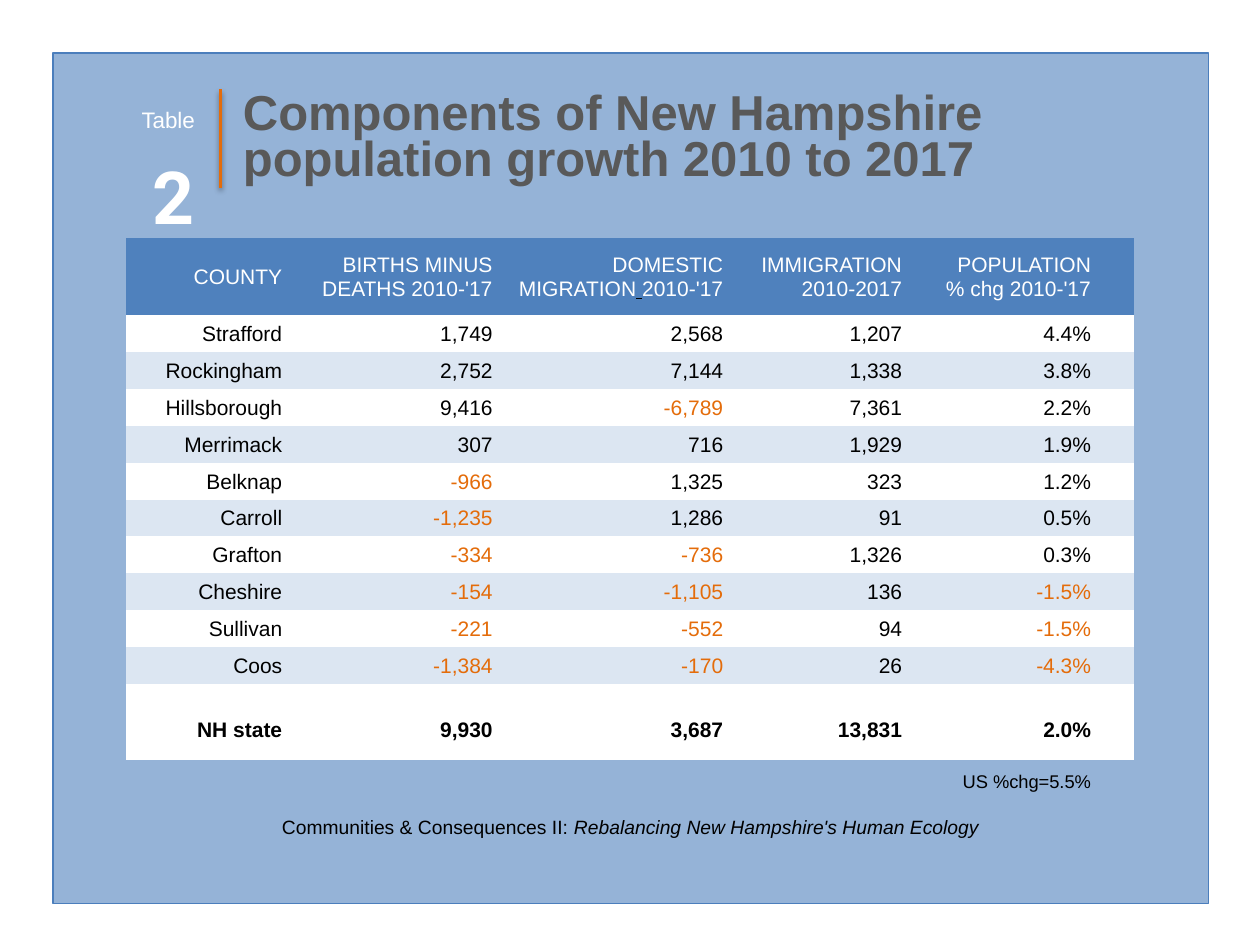
from dataclasses import dataclass

from lxml.etree import SubElement
from pptx import Presentation
from pptx.dml.color import RGBColor
from pptx.enum.shapes import MSO_CONNECTOR, MSO_SHAPE
from pptx.enum.text import MSO_ANCHOR, MSO_AUTO_SIZE, PP_ALIGN
from pptx.oxml import parse_xml
from pptx.oxml.ns import qn
from pptx.util import Inches, Pt

NO_STYLE_NO_GRID = "{2D5ABB26-0587-4C30-8999-92F81FD0307C}"


@dataclass(frozen=True)
class Theme:
    font: str = "Arial"
    number_font: str = "Roboto"
    panel: str = "95B3D7"
    panel_line: str = "4B7EBC"
    header: str = "4F81BD"
    band: str = "DCE6F2"
    white: str = "FFFFFF"
    black: str = "000000"
    title: str = "595959"
    accent: str = "E46C0A"
    number_size: float = 72
    title_size: float = 28
    label_size: float = 22
    table_size: float = 12
    source_size: float = 11
    note_size: float = 10.5


HEADERS = [
    "COUNTY",
    "BIRTHS MINUS\vDEATHS 2010-'17",
    "DOMESTIC\vMIGRATION",
    "IMMIGRATION\n2010-2017",
    "POPULATION\v% chg 2010-'17",
]
COUNTIES = [
    ["Strafford", "1,749", "2,568", "1,207", "4.4%"],
    ["Rockingham", "2,752", "7,144", "1,338", "3.8%"],
    ["Hillsborough", "9,416", "-6,789", "7,361", "2.2%"],
    ["Merrimack", "307", "716", "1,929", "1.9%"],
    ["Belknap", "-966", "1,325", "323", "1.2%"],
    ["Carroll", "-1,235", "1,286", "91", "0.5%"],
    ["Grafton", "-334", "-736", "1,326", "0.3%"],
    ["Cheshire", "-154", "-1,105", "136", "-1.5%"],
    ["Sullivan", "-221", "-552", "94", "-1.5%"],
    ["Coos", "-1,384", "-170", "26", "-4.3%"],
]
STATE_TOTAL = ["NH state", "9,930", "3,687", "13,831", "2.0%"]
COLUMN_WIDTHS = [1.25, 1.67, 1.83, 1.42, 1.5, 0.33]


class SlideBuilder:
    def __init__(self, slide, theme):
        self.slide = slide
        self.theme = theme

    def style_font(self, font, size, color, bold=False, name=None):
        font.name = name or self.theme.font
        font.size = Pt(size)
        font.bold = bold
        font.color.rgb = RGBColor.from_string(color)

    def panel(self, left, top, width, height):
        shape = self.slide.shapes.add_shape(
            MSO_SHAPE.RECTANGLE, Inches(left), Inches(top), Inches(width), Inches(height))
        shape.shadow.inherit = False
        shape.fill.solid()
        shape.fill.fore_color.rgb = RGBColor.from_string(self.theme.panel)
        shape.line.color.rgb = RGBColor.from_string(self.theme.panel_line)
        shape.line.width = Pt(0.75)

    def text(self, box, text, size, color, bold=False, name=None,
             align=PP_ALIGN.CENTER, wrap=True, raised=None):
        """Add a one-paragraph text box; raised is the baseline shift in percent."""
        shape = self.slide.shapes.add_textbox(*(Inches(value) for value in box))
        frame = shape.text_frame
        frame.word_wrap = wrap
        frame.auto_size = MSO_AUTO_SIZE.SHAPE_TO_FIT_TEXT
        paragraph = frame.paragraphs[0]
        paragraph.text = text
        paragraph.alignment = align
        self.style_font(paragraph.font, size, color, bold, name)
        if raised:
            for run in paragraph.runs:
                run.font.size = Pt(size)
                run._r.get_or_add_rPr().set("baseline", str(raised * 1000))
        return paragraph

    def divider(self, x, top, bottom):
        connector = self.slide.shapes.add_connector(
            MSO_CONNECTOR.STRAIGHT, Inches(x), Inches(top), Inches(x), Inches(bottom))
        connector.line.color.rgb = RGBColor.from_string(self.theme.accent)
        connector.line.width = Pt(2)
        effects = SubElement(connector._element.spPr, qn("a:effectLst"))
        effects.append(parse_xml(
            '<a:outerShdw xmlns:a="http://schemas.openxmlformats.org/drawingml/2006/main"'
            f' blurRad="{Pt(3.1)}" dist="{Pt(1.6)}" dir="5400000" rotWithShape="0">'
            '<a:srgbClr val="000000"><a:alpha val="38000"/></a:srgbClr></a:outerShdw>'))

    def table(self, left, top, column_widths, row_heights):
        frame = self.slide.shapes.add_table(
            len(row_heights), len(column_widths), Inches(left), Inches(top),
            Inches(sum(column_widths)), sum(row_heights))
        table = frame.table
        table.first_row = table.horz_banding = False
        table._tbl.tblPr.find(qn("a:tableStyleId")).text = NO_STYLE_NO_GRID
        for column, width in zip(table.columns, column_widths):
            column.width = Inches(width)
        for row, height in zip(table.rows, row_heights):
            row.height = height
        return table

    def table_row(self, row, texts, fill=None, color=None, size=None,
                  bold=False, anchor=MSO_ANCHOR.MIDDLE):
        """Fill one row; negative values take the accent colour."""
        for index, cell in enumerate(row.cells):
            text = texts[index] if index < len(texts) else ""
            cell.margin_left = cell.margin_right = cell.margin_top = Inches(0.01)
            cell.margin_bottom = 0
            cell.vertical_anchor = anchor
            if fill:
                cell.fill.solid()
                cell.fill.fore_color.rgb = RGBColor.from_string(fill)
            else:
                cell.fill.background()
            cell.text_frame.text = text
            text_color = self.theme.accent if text.startswith("-") else color or self.theme.black
            for paragraph in cell.text_frame.paragraphs:
                paragraph.alignment = PP_ALIGN.RIGHT
                self.style_font(paragraph.font, size or self.theme.table_size, text_color, bold)


def fill_population_table(builder):
    theme = builder.theme
    county_height = Inches(2.93) // len(COUNTIES)
    row_heights = [Inches(0.61), *[county_height] * len(COUNTIES),
                   Inches(0.26), Inches(0.34), Inches(0.26)]
    table = builder.table(1, 1.89, COLUMN_WIDTHS, row_heights)
    header, *county_rows, spacer, total, note = table.rows

    builder.table_row(header, HEADERS, theme.header, theme.white)
    migration = header.cells[2].text_frame.paragraphs[0]
    space = migration.add_run()
    space.text = " "
    space.font.underline = True
    space.font.bold = True
    space.font.color.rgb = RGBColor.from_string(theme.black)
    migration.add_run().text = "2010-'17"

    for index, (row, values) in enumerate(zip(county_rows, COUNTIES)):
        builder.table_row(row, values, theme.band if index % 2 else theme.white)
    builder.table_row(spacer, [], theme.white)
    builder.table_row(total, STATE_TOTAL, theme.white, bold=True, anchor=MSO_ANCHOR.TOP)
    builder.table_row(note, [""] * 4 + ["US %chg=5.5%"], size=theme.note_size,
                      anchor=MSO_ANCHOR.BOTTOM)


def main():
    presentation = Presentation()
    presentation.slide_width = Inches(10)
    presentation.slide_height = Inches(7.5)
    theme = Theme()
    builder = SlideBuilder(presentation.slides.add_slide(presentation.slide_layouts[6]), theme)

    builder.panel(0.42, 0.42, 9.17, 6.75)
    source = builder.text((0.42, 6.42, 9.17, 0.29), "Communities & Consequences II: ",
                          theme.source_size, theme.black)
    book = source.add_run()
    book.text = "Rebalancing New Hampshire's Human Ecology"
    book.font.italic = True

    title = builder.text((1.83, 0.71, 6.14, 0.85),
                         "Components of New Hampshire\vpopulation growth 2010 to 2017",
                         theme.title_size, theme.title, bold=True,
                         align=PP_ALIGN.LEFT, wrap=False)
    title.line_spacing = Pt(25.8)

    fill_population_table(builder)
    builder.divider(1.75, 0.71, 1.49)
    builder.text((1.09, 0.76, 0.58, 0.91), "2", theme.number_size, theme.white, bold=True,
                 name=theme.number_font, wrap=False, raised=3)
    builder.text((0.92, 0.71, 0.83, 0.35), "Table", theme.label_size, theme.white, raised=15)

    presentation.save("out.pptx")


if __name__ == "__main__":
    main()
